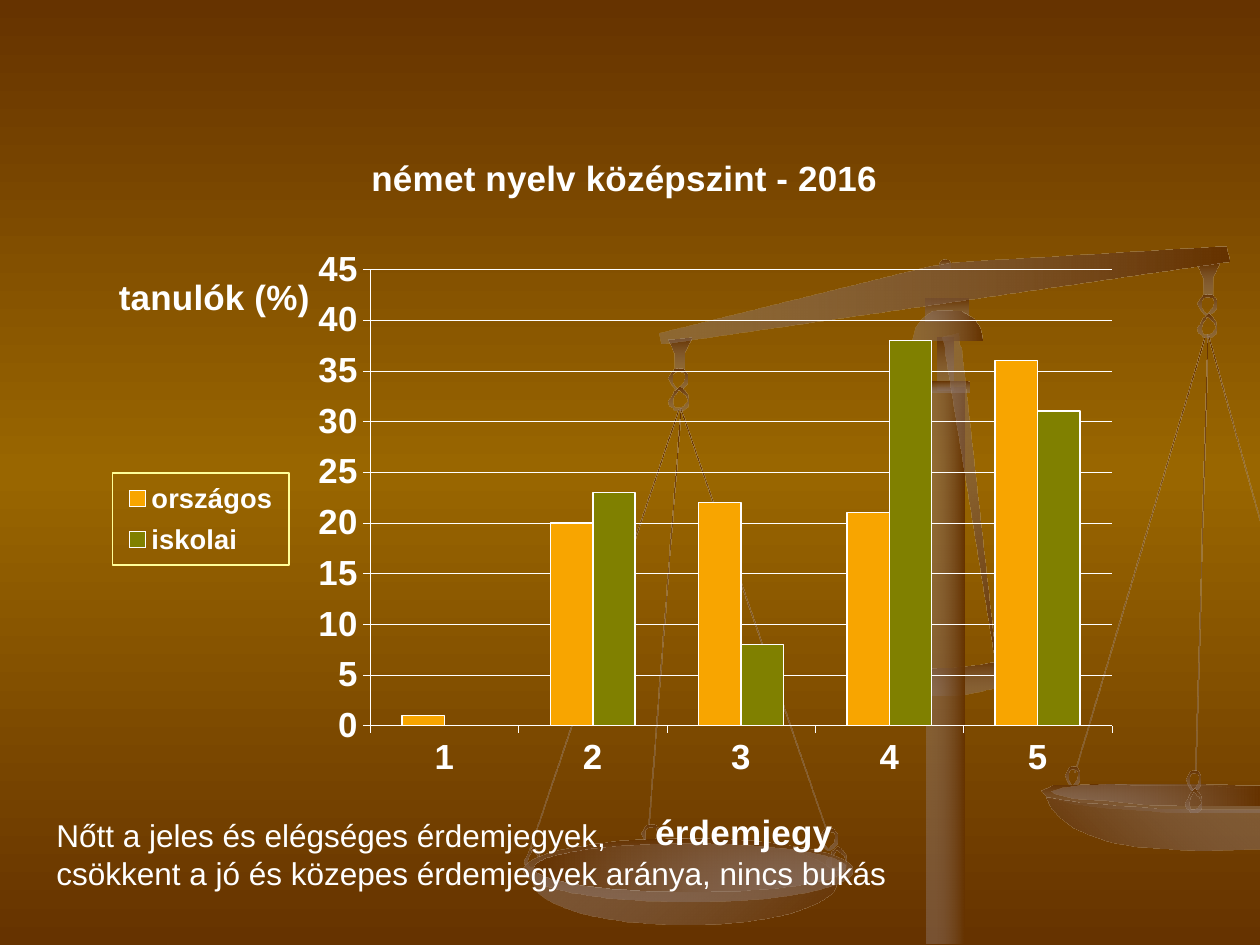
"""Build a slide with a scales motif and a column chart of exam grades."""
from dataclasses import dataclass
from typing import NamedTuple

from lxml import etree
from pptx import Presentation
from pptx.chart.data import CategoryChartData
from pptx.dml.color import RGBColor
from pptx.enum.chart import XL_CHART_TYPE, XL_LEGEND_POSITION, XL_TICK_LABEL_POSITION, XL_TICK_MARK
from pptx.enum.shapes import MSO_SHAPE
from pptx.enum.text import MSO_AUTO_SIZE
from pptx.oxml.ns import qn
from pptx.util import Pt

SCALE = 914400 / 126
RECTANGLE, ELLIPSE, ROUNDED = MSO_SHAPE.RECTANGLE, MSO_SHAPE.OVAL, MSO_SHAPE.ROUNDED_RECTANGLE
COLUMN_CLUSTERED = XL_CHART_TYPE.COLUMN_CLUSTERED
LEGEND_RIGHT = XL_LEGEND_POSITION.RIGHT
LABELS_LOW = XL_TICK_LABEL_POSITION.LOW
TICK_OUT, TICK_NONE = XL_TICK_MARK.OUTSIDE, XL_TICK_MARK.NONE
FIT_SHAPE = MSO_AUTO_SIZE.SHAPE_TO_FIT_TEXT


@dataclass(frozen=True)
class Theme:
    """Colours, type sizes and line widths of the slide."""
    font: str = "Arial"
    dark: str = "663300"
    gold: str = "996600"
    metal: str = "937F79"
    metal_alpha: int = 40
    white: str = "FFFFFF"
    legend_border: str = "FFFF99"
    series: tuple = ("F8A500", "808000")
    title_size: float = 20
    axis_size: float = 19.9
    legend_size: float = 15.6
    note_size: float = 18
    thin: float = 0.23
    outline: float = 0.92


THEME = Theme()
SHADE = (THEME.dark, THEME.metal)
SHINE = (THEME.metal, THEME.dark)


class Part(NamedTuple):
    """Preset shape of the scales, in px."""
    kind: int
    left: int
    top: int
    width: int
    height: int
    rotation: float = 0
    colours: tuple = SHADE
    angle: int = 90


class Outline(NamedTuple):
    """Free outline of the scales, its contours relative to left and top, in px."""
    contours: tuple
    left: int = 0
    top: int = 0
    stretch: float = 1
    colours: tuple = SHADE
    angle: int = 90


UPPER_RING = (
    ((9, 21), (14, 18), (18, 13), (18, 6), (14, 1), (9, 0), (5, 1), (3, 4), (0, 9), (3, 15), (6, 19)),
    ((10, 3), (14, 4), (15, 6), (15, 9), (14, 13), (11, 16), (9, 19), (6, 16), (4, 13), (4, 6), (6, 4)))
LOWER_RING = (
    ((1, 19), (4, 21), (6, 24), (13, 24), (18, 20), (19, 14), (18, 8), (15, 4), (11, 0), (5, 5), (3, 10), (0, 14)),
    ((4, 14), (5, 10), (8, 6), (9, 3), (16, 9), (18, 14), (14, 19), (11, 20), (6, 20), (4, 16)))
HOOK = (((22, 0), (0, 2), (6, 16), (6, 34), (15, 34), (15, 15)),)
BRACE = (((878, 665), (912, 669), (931, 669), (954, 668), (980, 665), (1011, 660), (1013, 685),
          (985, 690), (968, 694), (946, 696), (924, 696), (900, 694), (877, 689)),)
PAN_RIM = (((1207, 786), (1130, 786), (1115, 785), (1090, 785), (1053, 786), (1047, 789), (1042, 791),
            (1048, 798), (1055, 799), (1074, 804), (1106, 808), (1152, 811), (1178, 813), (1260, 813),
            (1260, 789), (1235, 789)),)
PAN_BOWL = (((1047, 798), (1052, 809), (1061, 818), (1074, 828), (1090, 835), (1111, 842), (1138, 847),
             (1169, 849), (1206, 851), (1260, 849), (1260, 810), (1201, 810), (1157, 809), (1116, 806),
             (1080, 803)),)
PAN_INSIDE = (((1205, 785), (1105, 785), (1079, 786), (1062, 788), (1051, 791), (1056, 794), (1074, 798),
               (1106, 800), (1149, 804), (1203, 805), (1260, 805), (1260, 786), (1234, 786)),)
BEAM = (((1226, 247), (1230, 262), (662, 344), (660, 333), (929, 267), (956, 263)),)
POINTER = (((997, 679), (945, 353), (945, 348), (942, 338), (958, 334), (959, 345), (961, 349)),)
CAP = (((948, 311), (961, 312), (973, 319), (979, 328), (982, 341), (912, 341), (915, 328), (922, 319),
        (932, 312)),)

SCALES = (
    Part(RECTANGLE, 925, 299, 43, 23),
    Part(ELLIPSE, 940, 260, 10, 10),
    Part(RECTANGLE, 1139, 328, 1, 454, 16.6),
    Outline(UPPER_RING, 1066, 767, 0.75),
    Part(RECTANGLE, 1201, 335, 1, 437, 1.5),
    Part(RECTANGLE, 1234, 333, 1, 193, 344.6),
    Part(RECTANGLE, 753, 397, 1, 445, 341),
    Part(RECTANGLE, 604, 398, 1, 464, 18.6),
    Part(RECTANGLE, 664, 410, 1, 417, 4.2),
    Outline(BRACE),
    Outline(PAN_RIM),
    Outline(PAN_BOWL, angle=315),
    Outline(PAN_INSIDE, colours=SHINE, angle=0),
    Outline(HOOK, 669, 338),
    Outline(UPPER_RING, 669, 369),
    Outline(LOWER_RING, 669, 387),
    Outline(HOOK, 1197, 263),
    Outline(UPPER_RING, 1198, 295),
    Outline(LOWER_RING, 1197, 314),
    Outline(UPPER_RING, 1187, 771, 0.75),
    Outline(BEAM, colours=SHINE, angle=0),
    Outline(UPPER_RING, 641, 825),
    Outline(LOWER_RING, 827, 847),
    Outline(LOWER_RING, 525, 847, 0.75),
    Part(ELLIPSE, 534, 839, 302, 86, 0, SHINE, 45),
    Part(ELLIPSE, 524, 839, 329, 63),
    Part(ELLIPSE, 534, 844, 311, 48, 0, SHADE, 0),
    Outline(UPPER_RING, 819, 829),
    Outline(LOWER_RING, 1186, 789, 0.8),
    Part(RECTANGLE, 927, 388, 38, 556, 0, SHINE, 0),
    Part(RECTANGLE, 937, 338, 16, 53),
    Part(ROUNDED, 924, 382, 45, 11),
    Outline(POINTER, colours=SHINE, angle=45),
    Outline(CAP, colours=SHINE, angle=0),
)


def px(*lengths: int) -> list[int]:
    """Turn px lengths into EMU."""
    return [round(length * SCALE) for length in lengths]


def paint_gradient(fill, element, colours: tuple, angle: int) -> None:
    """Fill with evenly spaced colours, the metal tone being translucent."""
    fill.gradient()
    fill.gradient_angle = (360 - angle) % 360
    stops = next(element.iter(qn("a:gsLst")))
    for stop in list(stops):
        stops.remove(stop)
    for index, colour in enumerate(colours):
        stop = etree.SubElement(stops, qn("a:gs"), pos=str(100000 * index // (len(colours) - 1)))
        tone = etree.SubElement(stop, qn("a:srgbClr"), val=colour)
        if colour == THEME.metal:
            etree.SubElement(tone, qn("a:alpha"), val=str(THEME.metal_alpha * 1000))


def draw_scales(slide) -> None:
    """Draw the scales from back to front."""
    for item in SCALES:
        if isinstance(item, Part):
            shape = slide.shapes.add_shape(item.kind, *px(item.left, item.top, item.width, item.height))
            shape.rotation = item.rotation
        else:
            first, *others = item.contours
            builder = slide.shapes.build_freeform(*first[0], scale=(SCALE * item.stretch, SCALE))
            builder.add_line_segments(first[1:])
            for contour in others:
                builder.move_to(*contour[0])
                builder.add_line_segments(contour[1:])
            shape = builder.convert_to_shape(*px(item.left, item.top))
        shape.shadow.inherit = False
        shape.line.fill.background()
        paint_gradient(shape.fill, shape.element, item.colours, item.angle)


def style_font(font, size: float, bold: bool = True) -> None:
    """Apply the white slide font."""
    font.name, font.size, font.bold = THEME.font, Pt(size), bold
    font.color.rgb = RGBColor.from_string(THEME.white)


def style_line(line, width: float) -> None:
    """Apply a white line."""
    line.color.rgb = RGBColor.from_string(THEME.white)
    line.width = Pt(width)


def place(element, index: int, **values) -> None:
    """Give a chart element a manual layout as fractions of the chart."""
    for layout in element.findall(qn("c:layout")):
        element.remove(layout)
    layout = etree.Element(qn("c:layout"))
    manual = etree.SubElement(layout, qn("c:manualLayout"))
    for name, value in values.items():
        etree.SubElement(manual, qn(f"c:{name}"), val=str(value))
    element.insert(index, layout)


def set_title(owner, text: str, x: float, y: float) -> None:
    """Give a chart or an axis a horizontal title."""
    owner.has_title = True
    title = owner.chart_title if hasattr(owner, "chart_title") else owner.axis_title
    paragraph = title.text_frame.paragraphs[0]
    paragraph.text = text
    style_font(paragraph.font, THEME.title_size)
    body = next(title.element.iter(qn("a:bodyPr")))
    body.set("rot", "0")
    body.set("vert", "horz")
    place(title.element, 1, xMode="edge", yMode="edge", x=x, y=y)


def draw_chart(slide) -> None:
    """Add the grade chart."""
    data = CategoryChartData()
    data.categories = ["1", "2", "3", "4", "5"]
    data.add_series("országos", (1, 20, 22, 21, 36))
    data.add_series("iskolai", (0, 23, 8, 38, 31))
    chart = slide.shapes.add_chart(COLUMN_CLUSTERED, *px(102, 135, 1052, 743), data).chart
    style_font(chart.font, THEME.axis_size)
    set_title(chart, "német nyelv középszint - 2016", 0.25, 0.02)
    set_title(chart.category_axis, "érdemjegy", 0.52, 0.9)
    set_title(chart.value_axis, "tanulók (%)", 0.01, 0.18)
    for axis in (chart.category_axis, chart.value_axis):
        axis.major_tick_mark, axis.minor_tick_mark = TICK_OUT, TICK_NONE
        style_font(axis.tick_labels.font, THEME.axis_size)
        style_line(axis.format.line, THEME.thin)
    chart.category_axis.tick_label_position = LABELS_LOW
    value_axis = chart.value_axis
    value_axis.minimum_scale, value_axis.maximum_scale, value_axis.major_unit = 0, 45, 5
    style_line(value_axis.major_gridlines.format.line, THEME.thin)
    plot = chart.plots[0]
    plot.gap_width, plot.overlap, plot.vary_by_categories = 150, 0, False
    for series, colour in zip(plot.series, THEME.series):
        series.format.fill.solid()
        series.format.fill.fore_color.rgb = RGBColor.from_string(colour)
        style_line(series.format.line, THEME.outline)
    place(next(chart.element.iter(qn("c:plotArea"))), 0, layoutTarget="inner", xMode="edge",
          yMode="edge", x=0.255, y=0.181, w=0.705, h=0.614)
    chart.has_legend = True
    chart.legend.position, chart.legend.include_in_layout = LEGEND_RIGHT, False
    style_font(chart.legend.font, THEME.legend_size)
    legend = next(chart.element.iter(qn("c:legend")))
    place(legend, 1, xMode="edge", yMode="edge", x=0.01, y=0.455, w=0.168, h=0.124)
    properties = etree.Element(qn("c:spPr"))
    line = etree.SubElement(properties, qn("a:ln"), w=str(Pt(THEME.outline)))
    fill = etree.SubElement(line, qn("a:solidFill"))
    etree.SubElement(fill, qn("a:srgbClr"), val=THEME.legend_border)
    legend.find(qn("c:overlay")).addnext(properties)


def draw_note(slide) -> None:
    """Add the two-line conclusion."""
    frame = slide.shapes.add_textbox(*px(44, 810, 890, 89)).text_frame
    frame.word_wrap, frame.auto_size = False, FIT_SHAPE
    frame.text = ("Nőtt a jeles és elégséges érdemjegyek,\n"
                  "csökkent a jó és közepes érdemjegyek aránya, nincs bukás")
    for paragraph in frame.paragraphs:
        style_font(paragraph.font, THEME.note_size, bold=False)


def main() -> None:
    """Build and save the presentation."""
    presentation = Presentation()
    presentation.slide_width, presentation.slide_height = px(1260, 945)
    slide = presentation.slides.add_slide(presentation.slide_layouts[6])
    paint_gradient(slide.background.fill, slide.element, (THEME.dark, THEME.gold, THEME.dark), 90)
    draw_scales(slide)
    draw_chart(slide)
    draw_note(slide)
    presentation.save("out.pptx")


if __name__ == "__main__":
    main()
